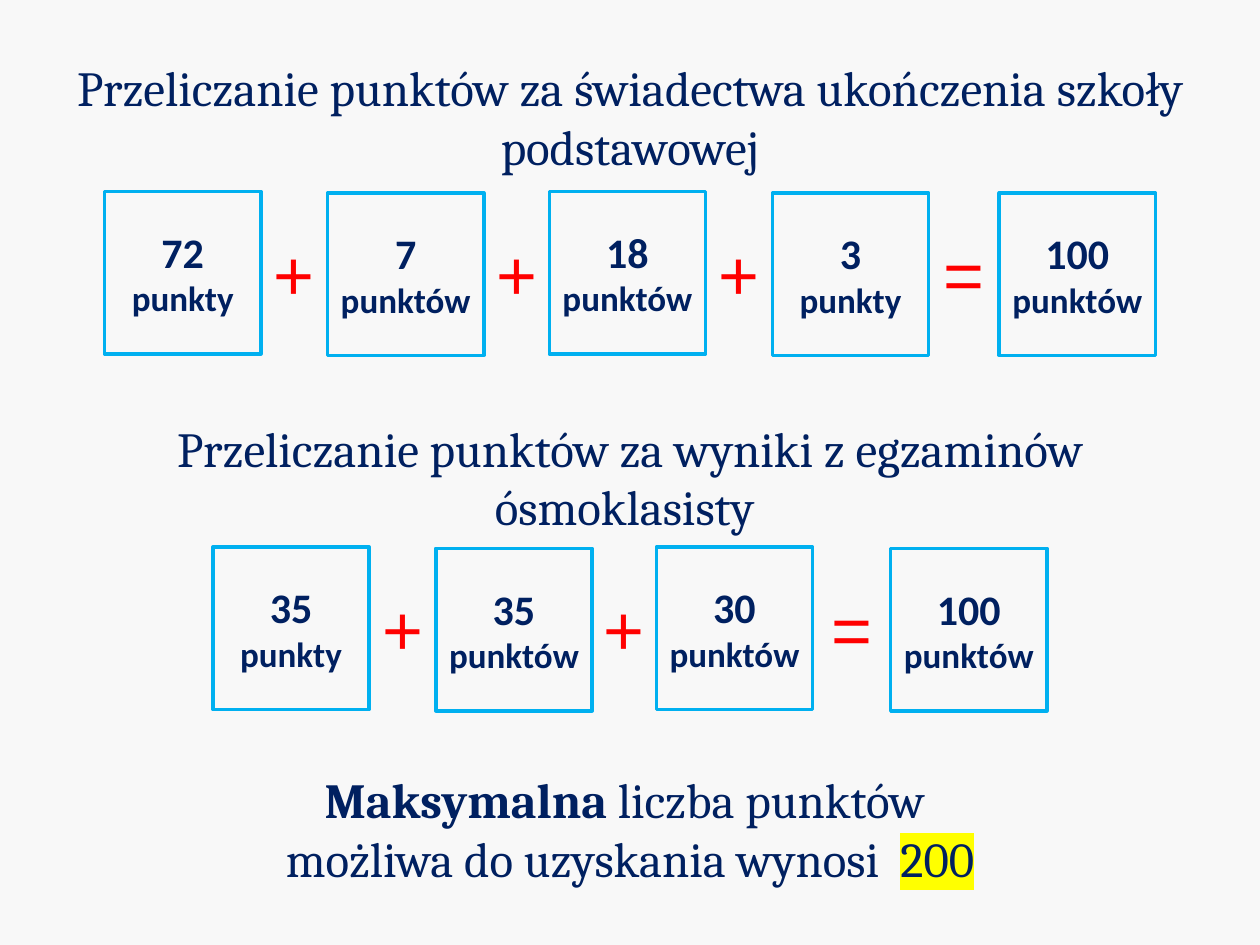
from lxml.etree import SubElement
from pptx import Presentation
from pptx.dml.color import RGBColor
from pptx.enum.shapes import MSO_SHAPE
from pptx.enum.text import MSO_ANCHOR, PP_ALIGN
from pptx.oxml.ns import qn
from pptx.util import Pt

BACKGROUND = RGBColor(0xF8, 0xF8, 0xF8)
NAVY = RGBColor(0x00, 0x20, 0x60)
SKY = RGBColor(0x00, 0xB0, 0xF0)
RED = RGBColor(0xFF, 0x00, 0x00)
HIGHLIGHT = RGBColor(0xFF, 0xFF, 0x00)

SLIDE_WIDTH, SLIDE_HEIGHT = 720, 540
MARGIN = 36
HEADING_HEIGHT = 90
BOX_WIDTH, BOX_HEIGHT = 89.3, 92.9
SIGN_WIDTH, SIGN_HEIGHT = 38.2, 55.4
BOX_STAGGER = 0.8   # every second box, and the total, sits slightly lower
SIGN_DROP = 18.8    # from the top of a row to the top of its signs

# Each equation: top of the row, then (left, number, unit) of its boxes;
# the last box is the total
EQUATIONS = [
    (109.4, [(59.8, "72", "punkty"), (187.2, "7", "punktów"),
             (313.9, "18", "punktów"), (441.4, "3", "punkty"),
             (571, "100", "punktów")]),
    (312.5, [(121.7, "35", "punkty"), (249.1, "35", "punktów"),
             (375.1, "30", "punktów"), (509, "100", "punktów")]),
]


def format_run(run, name, size, color, bold=False):
    font = run.font
    font.name, font.size, font.bold = name, Pt(size), bold
    font.color.rgb = color


def add_heading(top, lines):
    """Add a centred heading; each line is a list of (text, bold) runs."""
    box = slide.shapes.add_textbox(
        Pt(MARGIN), Pt(top), Pt(SLIDE_WIDTH - 2 * MARGIN), Pt(HEADING_HEIGHT))
    frame = box.text_frame
    frame.word_wrap = True
    frame.vertical_anchor = MSO_ANCHOR.MIDDLE
    paragraph = frame.paragraphs[0]
    paragraph.alignment = PP_ALIGN.CENTER
    for index, line in enumerate(lines):
        if index > 0:
            paragraph.add_line_break()
        for text, bold in line:
            run = paragraph.add_run()
            run.text = text
            format_run(run, "Cambria", 28, NAVY, bold)
    return paragraph


presentation = Presentation()
presentation.slide_width, presentation.slide_height = Pt(SLIDE_WIDTH), Pt(SLIDE_HEIGHT)
slide = presentation.slides.add_slide(presentation.slide_layouts[6])
slide.background.fill.solid()
slide.background.fill.fore_color.rgb = BACKGROUND

# Headings
add_heading(21.6, [[("Przeliczanie punktów za świadectwa ukończenia szkoły podstawowej", False)]])
add_heading(227.5, [[("Przeliczanie punktów za wyniki z egzaminów ósmoklasisty ", False)]])
summary = add_heading(428.4, [
    [("Maksymalna", True), (" liczba punktów ", False)],
    [("możliwa do uzyskania wynosi  ", False), ("200", False)],
])

# Highlight the final score; the element must follow the text fill
score_properties = summary.runs[-1]._r.get_or_add_rPr()
highlight = SubElement(score_properties, qn("a:highlight"))
SubElement(highlight, qn("a:srgbClr"), val=str(HIGHLIGHT))
score_properties.find(qn("a:solidFill")).addnext(highlight)

# Equations: boxes joined by signs
for row_top, boxes in EQUATIONS:
    total_index = len(boxes) - 1
    for index, (left, number, unit) in enumerate(boxes):
        is_low = index % 2 == 1 or index == total_index
        top = row_top + BOX_STAGGER if is_low else row_top
        box = slide.shapes.add_shape(
            MSO_SHAPE.RECTANGLE, Pt(left), Pt(top), Pt(BOX_WIDTH), Pt(BOX_HEIGHT))
        box.shadow.inherit = False
        box.fill.background()
        box.line.color.rgb = SKY
        box.line.width = Pt(2)
        frame = box.text_frame
        frame.margin_left = frame.margin_right = 0
        frame.margin_top = frame.margin_bottom = 0
        frame.vertical_anchor = MSO_ANCHOR.MIDDLE
        frame.text = f"{number}\n{unit}"
        for paragraph, size in zip(frame.paragraphs, (24, 20)):
            paragraph.alignment = PP_ALIGN.CENTER
            format_run(paragraph.runs[0], "Calibri", size, NAVY, bold=True)

        if index == 0:
            continue
        # Centre the sign in the gap before this box
        previous_right = boxes[index - 1][0] + BOX_WIDTH
        sign_left = (previous_right + left - SIGN_WIDTH) / 2
        sign = slide.shapes.add_textbox(
            Pt(sign_left), Pt(row_top + SIGN_DROP), Pt(SIGN_WIDTH), Pt(SIGN_HEIGHT))
        frame = sign.text_frame
        frame.word_wrap = False
        frame.text = "=" if index == total_index else "+"
        paragraph = frame.paragraphs[0]
        paragraph.alignment = PP_ALIGN.CENTER
        format_run(paragraph.runs[0], "Arial", 40, RED)

presentation.save("out.pptx")
